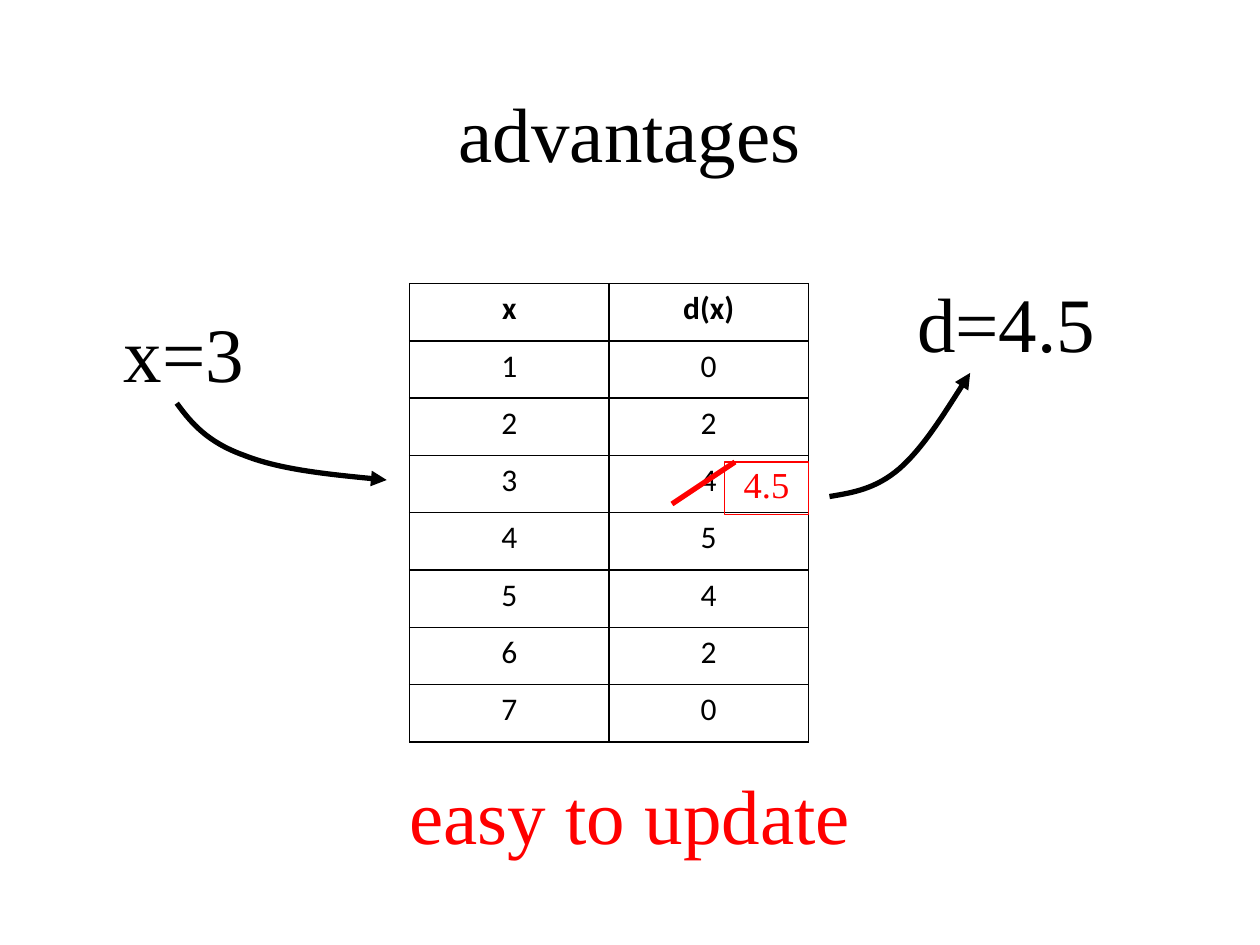
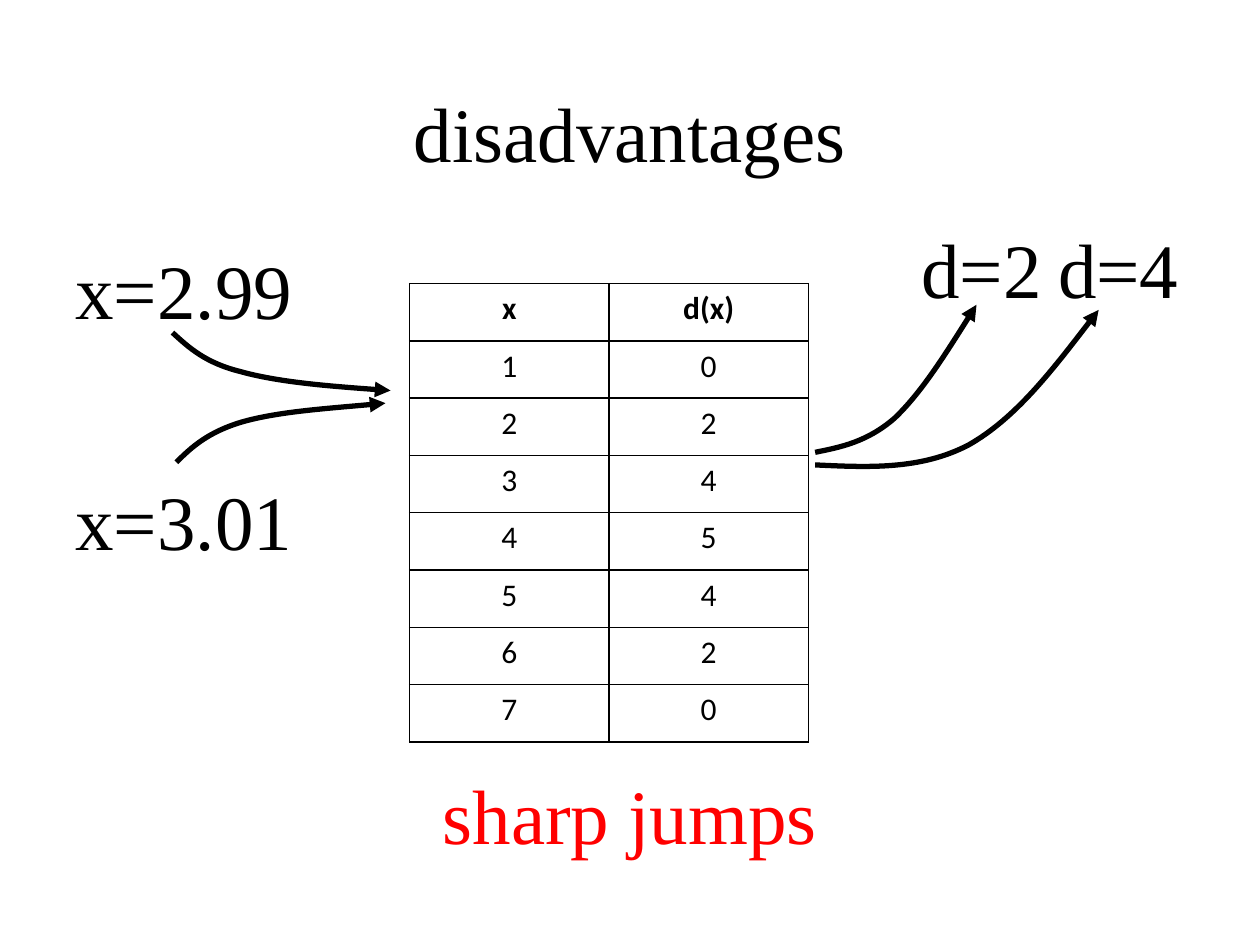
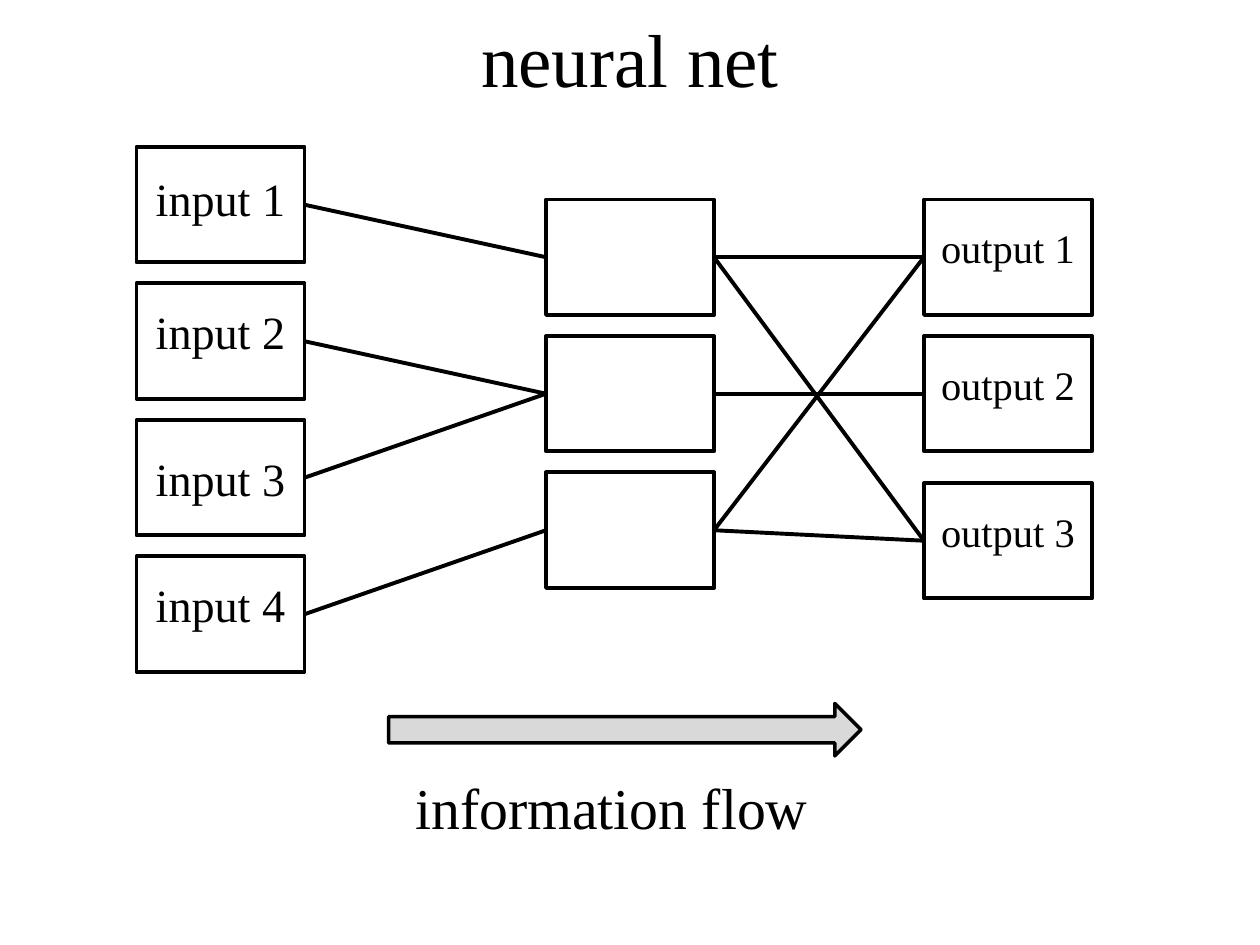
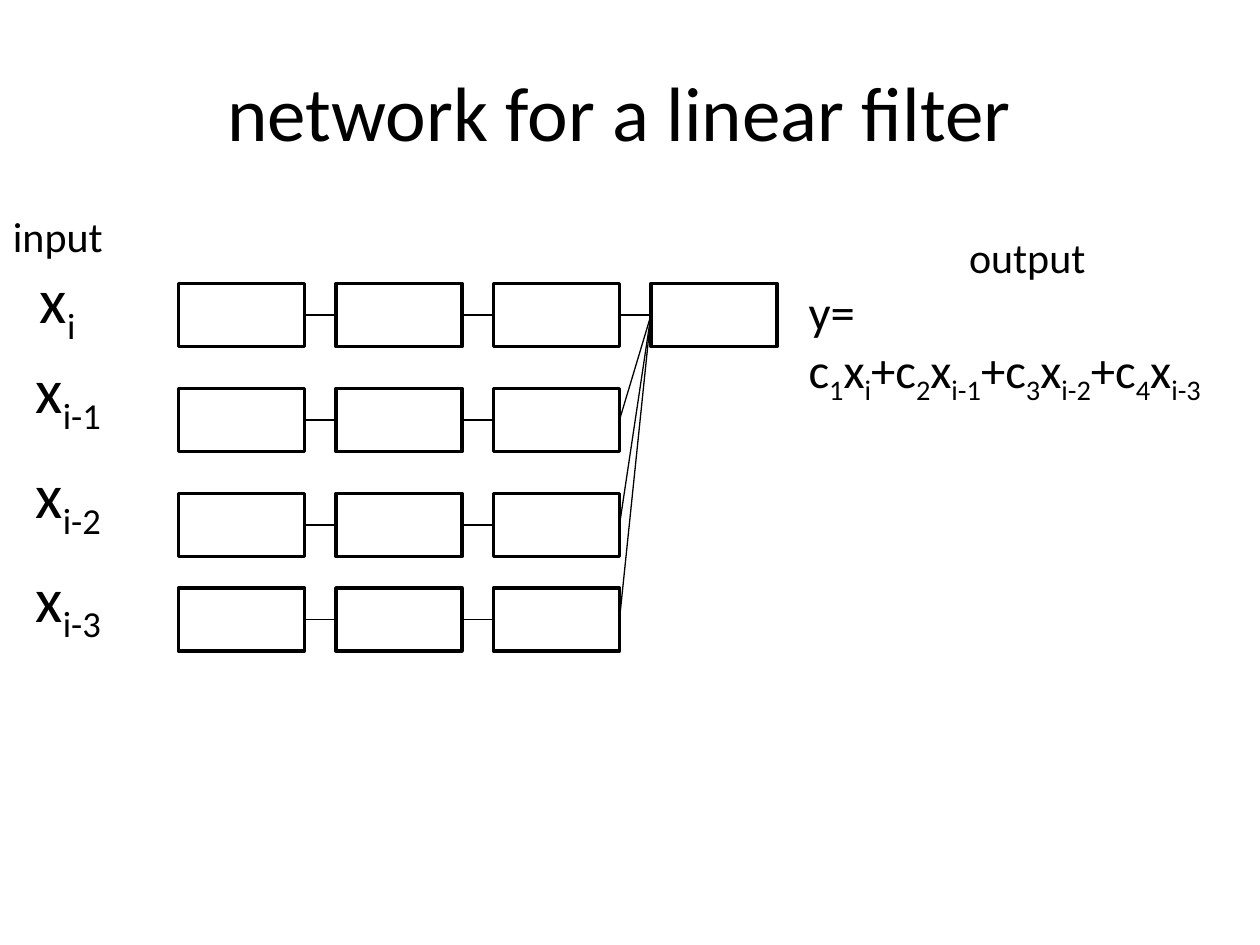
from lxml.etree import SubElement
from pptx import Presentation
from pptx.dml.color import RGBColor
from pptx.enum.shapes import MSO_CONNECTOR, MSO_SHAPE
from pptx.enum.text import MSO_ANCHOR, MSO_AUTO_SIZE, PP_ALIGN
from pptx.oxml.ns import qn
from pptx.util import Pt

SERIF, SANS = "Times New Roman", "Calibri"
BLACK, RED, GREY = "000000", "FF0000", "D9D9D9"
TITLE_ONLY = 5
RIGHT_SITE, LEFT_SITE = 3, 1
LOOKUP = [("x", "d(x)"), (1, 0), (2, 2), (3, 4), (4, 5), (5, 4), (6, 2), (7, 0)]


def rgb(hex_code):
    return RGBColor.from_string(hex_code)


def pts(*lengths):
    return [Pt(length) for length in lengths]


class Deck:
    def __init__(self):
        self.prs = Presentation()
        self.prs.slide_width, self.prs.slide_height = pts(720, 540)
        self.slide = None
        self.font = SERIF

    def new_slide(self, title, box=(0, 30, 720, 90), size=44, font=SERIF):
        self.font = font
        self.slide = self.prs.slides.add_slide(self.prs.slide_layouts[TITLE_ONLY])
        holder = self.slide.shapes.title
        holder.left, holder.top, holder.width, holder.height = pts(*box)
        self.set_lines(holder, [(title, size)])

    def set_lines(self, shape, lines, color=BLACK, spacing=None, align=PP_ALIGN.CENTER):
        """Fill a shape with (text, size) lines; every second part between bars is a subscript."""
        frame = shape.text_frame
        frame.word_wrap = True
        frame.auto_size = MSO_AUTO_SIZE.NONE
        frame.vertical_anchor = MSO_ANCHOR.MIDDLE
        for number, (text, size) in enumerate(lines):
            paragraph = frame.add_paragraph() if number else frame.paragraphs[0]
            paragraph.alignment = align
            if spacing:
                paragraph.line_spacing = spacing
            for index, part in enumerate(text.split("|")):
                run = paragraph.add_run()
                run.text = part
                self.style(run, size, color)
                if index % 2:
                    run._r.get_or_add_rPr().set("baseline", "-25000")

    def style(self, run, size, color=BLACK, bold=False):
        run.font.name, run.font.size, run.font.bold = self.font, Pt(size), bold
        run.font.color.rgb = rgb(color)

    def label(self, box, *lines, **options):
        text_box = self.slide.shapes.add_textbox(*pts(*box))
        self.set_lines(text_box, lines, **options)
        return text_box

    def outline(self, shape, color, width):
        shape.line.color.rgb = rgb(color)
        shape.line.width = Pt(width)

    def shape(self, box, kind=MSO_SHAPE.RECTANGLE, fill=None, color=BLACK, width=2.25):
        shape = self.slide.shapes.add_shape(kind, *pts(*box))
        shape.shadow.inherit = False
        if fill:
            shape.fill.solid()
            shape.fill.fore_color.rgb = rgb(fill)
        else:
            shape.fill.background()
        self.outline(shape, color, width)
        return shape

    def line(self, start=(0, 0), end=(0, 0), color=BLACK, width=2.25):
        connector = self.slide.shapes.add_connector(
            MSO_CONNECTOR.STRAIGHT, *pts(*start, *end))
        self.outline(connector, color, width)
        SubElement(connector._element.spPr, qn("a:effectLst"))
        return connector

    def link(self, source, target, width=2.25):
        """Join the right side of one box to the left side of another."""
        connector = self.line(width=width)
        connector.begin_connect(source, RIGHT_SITE)
        connector.end_connect(target, LEFT_SITE)

    def curved_arrow(self, start, *controls):
        """Draw Bézier segments, three control points each, ending in an arrowhead."""
        builder = self.slide.shapes.build_freeform(*pts(*start))
        builder.add_line_segments([pts(*point) for point in controls], close=False)
        curve = builder.convert_to_shape()
        curve.shadow.inherit = False
        curve.fill.background()
        self.outline(curve, BLACK, 3)
        SubElement(curve.line._get_or_add_ln(), qn("a:tailEnd"), type="triangle")
        outline = curve._element.spPr.find(".//" + qn("a:path"))
        segments = outline.findall(qn("a:lnTo"))
        for first in range(0, len(segments), 3):
            bezier = SubElement(outline, qn("a:cubicBezTo"))
            for segment in segments[first:first + 3]:
                bezier.append(segment[0])
                outline.remove(segment)

    def table(self, rows, box):
        columns = len(rows[0])
        table = self.slide.shapes.add_table(len(rows), columns, *pts(*box)).table
        table.first_row = table.horz_banding = False
        self.font = SANS
        for row_index, values in enumerate(rows):
            table.rows[row_index].height = Pt(box[3] / len(rows))
            for column, value in enumerate(values):
                cell = table.cell(row_index, column)
                self.border(cell)
                cell.fill.background()
                paragraph = cell.text_frame.paragraphs[0]
                paragraph.text = str(value)
                paragraph.alignment = PP_ALIGN.CENTER
                self.style(paragraph.runs[0], 18, bold=row_index == 0)
        self.font = SERIF

    def border(self, cell):
        properties = cell._tc.get_or_add_tcPr()
        for side in ("lnL", "lnR", "lnT", "lnB"):
            edge = SubElement(properties, qn("a:" + side), w=str(Pt(1)))
            fill = SubElement(edge, qn("a:solidFill"))
            SubElement(fill, qn("a:srgbClr"), val=BLACK)


def lookup_slide(deck, title, verdict, labels, curves):
    deck.new_slide(title)
    deck.table(LOOKUP, (234, 162, 228, 262))
    for text, left, top in labels:
        deck.label((left, top, 162, 90), (text, 44))
    for curve in curves:
        deck.curved_arrow(*curve)
    deck.label((0, 420, 720, 90), (verdict, 44), color=RED)


def advantages(deck):
    lookup_slide(
        deck, "advantages", "easy to update",
        [("x=3", 24, 156), ("d=4.5", 494, 139)],
        [[(101, 230.4), (109.4, 242), (118.8, 252.7), (139, 260),
          (159, 268), (190, 271.4), (221, 274.3)],
         [(474, 283.7), (487.4, 281.5), (500.4, 279.4), (514, 267.8),
          (527, 256.3), (540.7, 234.7), (554.4, 213.1)]])
    deck.line((384, 288), (420, 264), RED, 3)
    correction = deck.shape((414, 264, 48, 30), color=RED, width=0.75)
    deck.set_lines(correction, [("4.5", 20.9)], color=RED, spacing=0.8)


def disadvantages(deck):
    lookup_slide(
        deck, "disadvantages", "sharp jumps",
        [("x=3.01", 24, 252), ("d=4", 558, 108), ("x=2.99", 24, 120), ("d=2", 480, 108)],
        [[(100.8, 264.2), (109.4, 255.6), (118.8, 247), (138.2, 241.2),
          (158.4, 235.4), (189.4, 233.3), (220.3, 230.4)],
         [(465.8, 265.7), (496.1, 267.1), (526.3, 268.6), (553.7, 254.2),
          (580.3, 239), (604.1, 208.1), (627.8, 177.1)],
         [(98.6, 190.1), (108, 198.7), (117.4, 207.4), (137.5, 212.4),
          (158.4, 218.2), (190.8, 221), (223.2, 223.2)],
         [(465.8, 258.5), (480.2, 255.6), (495.4, 252.7), (511.2, 239),
          (526.3, 224.6), (542.2, 199.4), (558, 174.2)]])


def neural_net(deck):
    deck.new_slide("neural net", (0, 0, 720, 66), 42.9)

    def layer(left, tops):
        return [deck.shape((left, top, 96, 66)) for top in tops]

    inputs = layer(78, range(84, 319, 78))
    hidden = layer(312, range(114, 271, 78))
    outputs = layer(528, (114, 192, 276))
    for source, target in ((0, 0), (1, 1), (2, 1), (3, 2)):
        deck.link(inputs[source], hidden[target])
    for source, target in ((1, 1), (0, 2), (2, 2), (2, 0), (0, 0)):
        deck.link(hidden[source], outputs[target])

    deck.label((228, 438, 243, 53), ("information flow", 33), spacing=0.8)
    deck.shape((222, 402, 270, 30), MSO_SHAPE.RIGHT_ARROW, GREY, width=2)
    for name, left, size, tops in (("input", 78, 26.4, (98, 174, 258, 330)),
                                   ("output", 528, 23.1, (126, 204, 288))):
        for number, top in enumerate(tops, 1):
            deck.label((left, top, 96, 36), (f"{name} {number}", size), spacing=0.8)


def linear_filter(deck):
    deck.new_slide("network for a linear filter", (30, 18, 648, 90), font=SANS)
    result = deck.shape((372, 162, 72, 36), width=2)
    for top in (162, 222, 282, 336):
        chain = [deck.shape((left, top, 72, 36), width=2) for left in (102, 192, 282)]
        for source, target in zip(chain, chain[1:] + [result]):
            deck.link(source, target, 0.75)

    deck.label((-30, 114, 126, 90), ("input", 24), ("x|i", 36))
    for delay, top in enumerate((180, 240, 299), 1):
        deck.label((-24, top, 126, 90), (f"x|i-{delay}", 36))
    formula = deck.label((455, 140, 264, 90), ("output", 24), ("y=", 27.9),
                         ("c|1|x|i|+c|2|x|i-1|+c|3|x|i-2|+c|4|x|i-3", 27.9),
                         align=PP_ALIGN.LEFT)
    heading = formula.text_frame.paragraphs[0]
    heading.alignment = PP_ALIGN.CENTER
    heading.line_spacing = 0.8


def main():
    deck = Deck()
    for build in (advantages, disadvantages, neural_net, linear_filter):
        build(deck)
    deck.prs.save("out.pptx")


if __name__ == "__main__":
    main()
